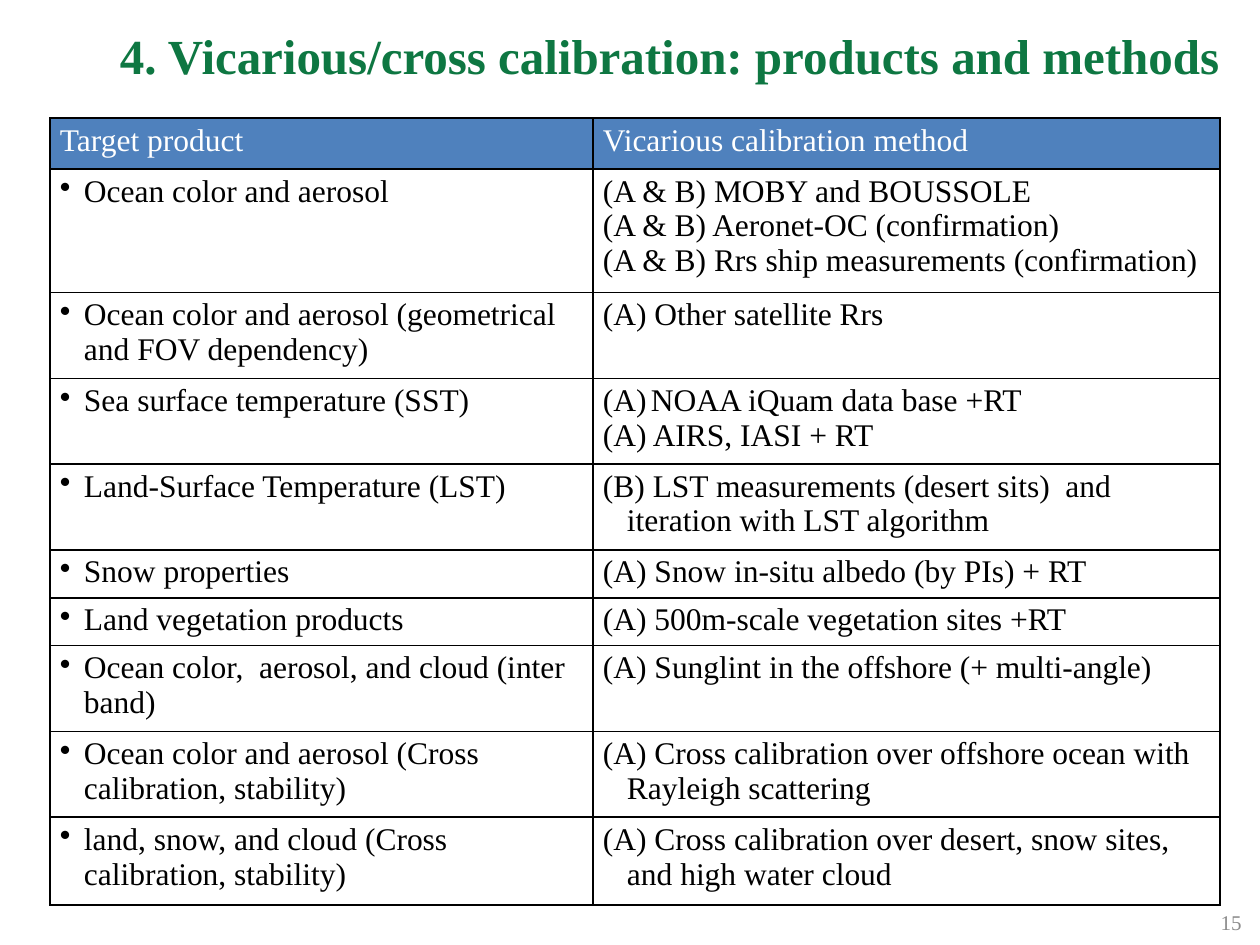
from lxml import etree
from pptx import Presentation
from pptx import util as u
from pptx.dml.color import RGBColor
from pptx.enum import text
from pptx.oxml import ns

COLORS = {"title": "0E7742", "header": "4F81BD", "white": "FFFFFF",
          "ink": "000000", "page": "8C8C8C"}
COLUMNS = [543, 627]
HEIGHTS = [51, 123, 86, 85, 86, 48, 47, 86, 85, 88]
HEADER = ("Target product", "Vicarious calibration method")
HANG = 24
NUMBER_HANG = 48
ROWS = [
    ("Ocean color and aerosol",
     [("(A & B) MOBY and BOUSSOLE", 0, None),
      ("(A & B) Aeronet-OC (confirmation)", 0, None),
      ("(A & B) Rrs ship measurements (confirmation)", 0, None)]),
    ("Ocean color and aerosol (geometrical and FOV dependency)",
     [("(A) Other satellite Rrs", 0, None)]),
    ("Sea surface temperature (SST)",
     [("NOAA iQuam data base +RT", NUMBER_HANG, "number"),
      ("(A) AIRS, IASI + RT", 0, None)]),
    ("Land-Surface Temperature (LST)",
     [("(B) LST measurements (desert sits)  and iteration with LST algorithm", HANG, None)]),
    ("Snow properties",
     [("(A) Snow in-situ albedo (by PIs) + RT", 0, None)]),
    ("Land vegetation products",
     [("(A) 500m-scale vegetation sites +RT", 0, None)]),
    ("Ocean color,  aerosol, and cloud (inter band)",
     [("(A) Sunglint in the offshore (+ multi-angle)", 0, None)]),
    ("Ocean color and aerosol (Cross calibration, stability)",
     [("(A) Cross calibration over offshore ocean with Rayleigh scattering", HANG, None)]),
    ("land, snow, and cloud (Cross calibration, stability)",
     [("(A) Cross calibration over desert, snow sites, and high water cloud", HANG, None)]),
]


def px(count):
    """Turn slide pixels into EMU."""
    return u.Emu(round(count * 914400 / 126))


class Painter:
    """Hold the style and the current slide, and draw each kind of element."""

    def __init__(self, page, font):
        self.page = page
        self.font = font

    def style(self, para, size, color, bold=False):
        """Set the font of a whole paragraph."""
        para.font.name = self.font
        para.font.size = u.Pt(size)
        para.font.bold = bold
        para.font.color.rgb = RGBColor.from_string(COLORS[color])

    def label(self, words, left, top, width, height, size, color, bold=False,
              align=text.PP_ALIGN.LEFT, anchor=text.MSO_ANCHOR.TOP):
        """Add a one-line text box."""
        box = self.page.shapes.add_textbox(px(left), px(top), px(width), px(height))
        frame = box.text_frame
        frame.word_wrap = True
        frame.vertical_anchor = anchor
        para = frame.paragraphs[0]
        para.text = words
        para.alignment = align
        self.style(para, size, color, bold)
        return frame

    def mark(self, para, hang, bullet):
        """Give a paragraph its hanging indent and its bullet or number."""
        props = para._p.get_or_add_pPr()
        props.set("marL", str(px(hang)))
        props.set("indent", str(-px(hang)))
        if bullet == "dot":
            etree.SubElement(props, ns.qn("a:buChar"), char="•")
        elif bullet == "number":
            etree.SubElement(props, ns.qn("a:buAutoNum"), type="alphaUcParenBoth")
        else:
            etree.SubElement(props, ns.qn("a:buNone"))

    def borders(self, cell):
        """Draw a thin line on all four sides of a cell."""
        props = cell._tc.get_or_add_tcPr()
        for side in "LRTB":
            line = etree.SubElement(props, ns.qn(f"a:ln{side}"), w=str(u.Pt(1)))
            fill = etree.SubElement(line, ns.qn("a:solidFill"))
            etree.SubElement(fill, ns.qn("a:srgbClr"), val=COLORS["ink"])

    def cell(self, cell, lines, color, fill=None):
        """Fill a table cell with (words, hang, bullet) lines."""
        cell.margin_left = cell.margin_right = px(10)
        cell.margin_top = cell.margin_bottom = px(5)
        self.borders(cell)
        if fill:
            cell.fill.solid()
            cell.fill.fore_color.rgb = RGBColor.from_string(COLORS[fill])
        else:
            cell.fill.background()
        frame = cell.text_frame
        for index, (words, hang, bullet) in enumerate(lines):
            para = frame.add_paragraph() if index else frame.paragraphs[0]
            para.text = words
            self.mark(para, hang, bullet)
            self.style(para, 18, color)

    def table(self, left, top):
        """Add the table of products and methods."""
        table = self.page.shapes.add_table(
            len(HEIGHTS), len(COLUMNS), px(left), px(top),
            px(sum(COLUMNS)), px(sum(HEIGHTS))).table
        table.first_row = table.horz_banding = False
        for column, width in zip(table.columns, COLUMNS):
            column.width = px(width)
        for row, height in zip(table.rows, HEIGHTS):
            row.height = px(height)
        for index, words in enumerate(HEADER):
            self.cell(table.cell(0, index), [(words, 0, None)], "white", "header")
        for index, (product, methods) in enumerate(ROWS, 1):
            self.cell(table.cell(index, 0), [(product, HANG, "dot")], "ink")
            self.cell(table.cell(index, 1), methods, "ink")


def main():
    """Build the slide and save it."""
    deck = Presentation()
    deck.slide_width, deck.slide_height = px(1260), px(945)
    painter = Painter(deck.slides.add_slide(deck.slide_layouts[6]), "Times New Roman")
    painter.label("15", 960, 910, 294, 25, 12, "page",
                  align=text.PP_ALIGN.RIGHT, anchor=text.MSO_ANCHOR.MIDDLE)
    title = painter.label("4. Vicarious/cross calibration: products and methods",
                          115, 19, 1135, 72, 28, "title", bold=True)
    title.margin_left = title.margin_right = px(5)
    painter.table(50, 118)
    deck.save("out.pptx")


if __name__ == "__main__":
    main()
